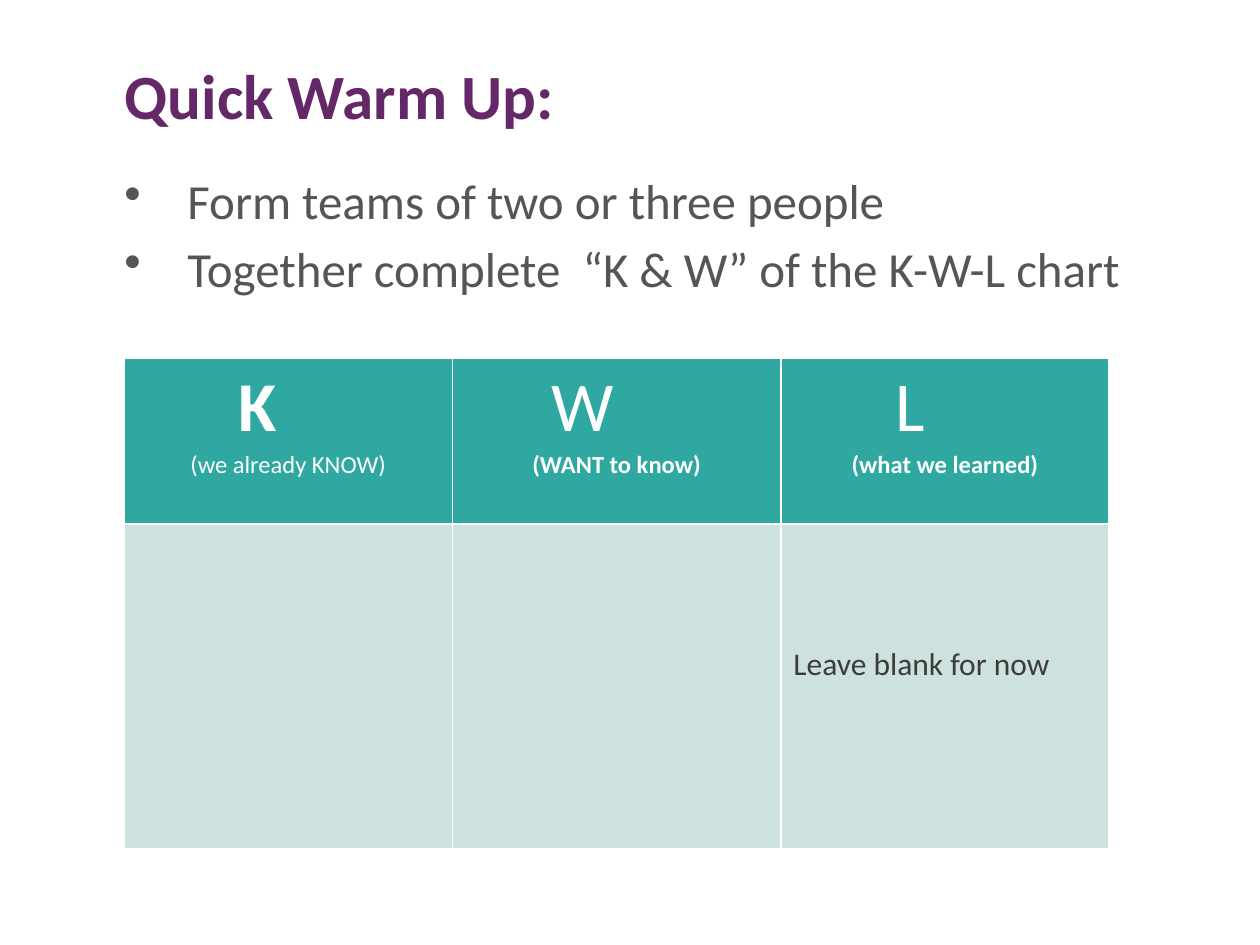
from lxml import etree
from pptx import Presentation
from pptx.dml.color import RGBColor
from pptx.enum.text import MSO_ANCHOR, MSO_AUTO_SIZE, PP_ALIGN
from pptx.oxml.ns import qn
from pptx.util import Cm, Pt

LEFT, CENTER = PP_ALIGN.LEFT, PP_ALIGN.CENTER
TOP = MSO_ANCHOR.TOP
NO_AUTOFIT = MSO_AUTO_SIZE.NONE

PURPLE = RGBColor(0x64, 0x28, 0x69)
GRAY = RGBColor(0x53, 0x55, 0x56)
DARK = RGBColor(0x3C, 0x3C, 0x3B)
WHITE = RGBColor(0xFF, 0xFF, 0xFF)
TEAL = RGBColor(0x2E, 0xA8, 0xA0)
PALE_TEAL = RGBColor(0xCD, 0xE1, 0xDF)


def write(paragraph, text, size, color, bold=False, align=LEFT, indent=0, bullet=False):
    """Fill a paragraph; indent is the left margin, hanging when bulleted."""
    properties = paragraph._p.get_or_add_pPr()
    properties.set("marL", str(indent))
    properties.set("indent", str(-indent if bullet else 0))
    if bullet:
        etree.SubElement(properties, qn("a:buChar")).set("char", "•")
    paragraph.alignment = align
    run = paragraph.add_run()
    run.text = text
    run.font.name = "Calibri"
    run.font.size = Pt(size)
    run.font.bold = bold
    run.font.color.rgb = color


def style_cell(cell, fill):
    """Give a cell white borders and a solid fill."""
    properties = cell._tc.get_or_add_tcPr()
    for side in ("a:lnL", "a:lnR", "a:lnT", "a:lnB"):
        line = etree.SubElement(properties, qn(side), w=str(Pt(1)))
        solid = etree.SubElement(line, qn("a:solidFill"))
        etree.SubElement(solid, qn("a:srgbClr"), val=str(WHITE))
    cell.fill.solid()
    cell.fill.fore_color.rgb = fill


presentation = Presentation()
presentation.slide_width, presentation.slide_height = Cm(25.4), Cm(19.05)
slide = presentation.slides.add_slide(presentation.slide_layouts[5])

# Title
title = slide.shapes.title
title.left, title.top, title.width, title.height = Cm(2.26), Cm(1.02), Cm(21.59), Cm(3.12)
title.text_frame.auto_size = NO_AUTOFIT
title.text_frame.vertical_anchor = TOP
write(title.text_frame.paragraphs[0], "Quick Warm Up:", 36, PURPLE, bold=True)

# Instructions
instructions = slide.shapes.add_textbox(Cm(2.26), Cm(3.3), Cm(21.59), Cm(11.35))
frame = instructions.text_frame
frame.word_wrap = True
steps = ["Form teams of two or three people",
         "Together complete  “K & W” of the K-W-L chart"]
for number, step in enumerate(steps):
    paragraph = frame.add_paragraph() if number else frame.paragraphs[0]
    write(paragraph, step, 28, GRAY, indent=Cm(1.27), bullet=True)
    paragraph.line_spacing = Pt(34)
    paragraph.space_after = Pt(5)

# K-W-L table
table = slide.shapes.add_table(2, 3, Cm(2.5), Cm(7.23), Cm(19.86), Cm(9.88)).table
table.rows[0].height, table.rows[1].height = Cm(3.33), Cm(6.55)
for column in table.columns:
    column.width = Cm(6.62)

# Header cells: letter, its indent and weight, caption and its weight
headings = [("K", 2.05, True, "(we already KNOW)", False),
            ("W", 1.75, False, "(WANT to know)", True),
            ("L", 2.05, False, "(what we learned)", True)]
for column, (letter, indent, letter_bold, caption, caption_bold) in enumerate(headings):
    cell = table.cell(0, column)
    style_cell(cell, TEAL)
    write(cell.text_frame.paragraphs[0], letter, 40, WHITE, bold=letter_bold, indent=Cm(indent))
    write(cell.text_frame.add_paragraph(), caption, 14, WHITE, bold=caption_bold, align=CENTER)
    style_cell(table.cell(1, column), PALE_TEAL)

# Note in the last column
note = table.cell(1, 2)
note.margin_top = Cm(2.45)
write(note.text_frame.paragraphs[0], "Leave blank for now", 18, DARK)

presentation.save("out.pptx")
